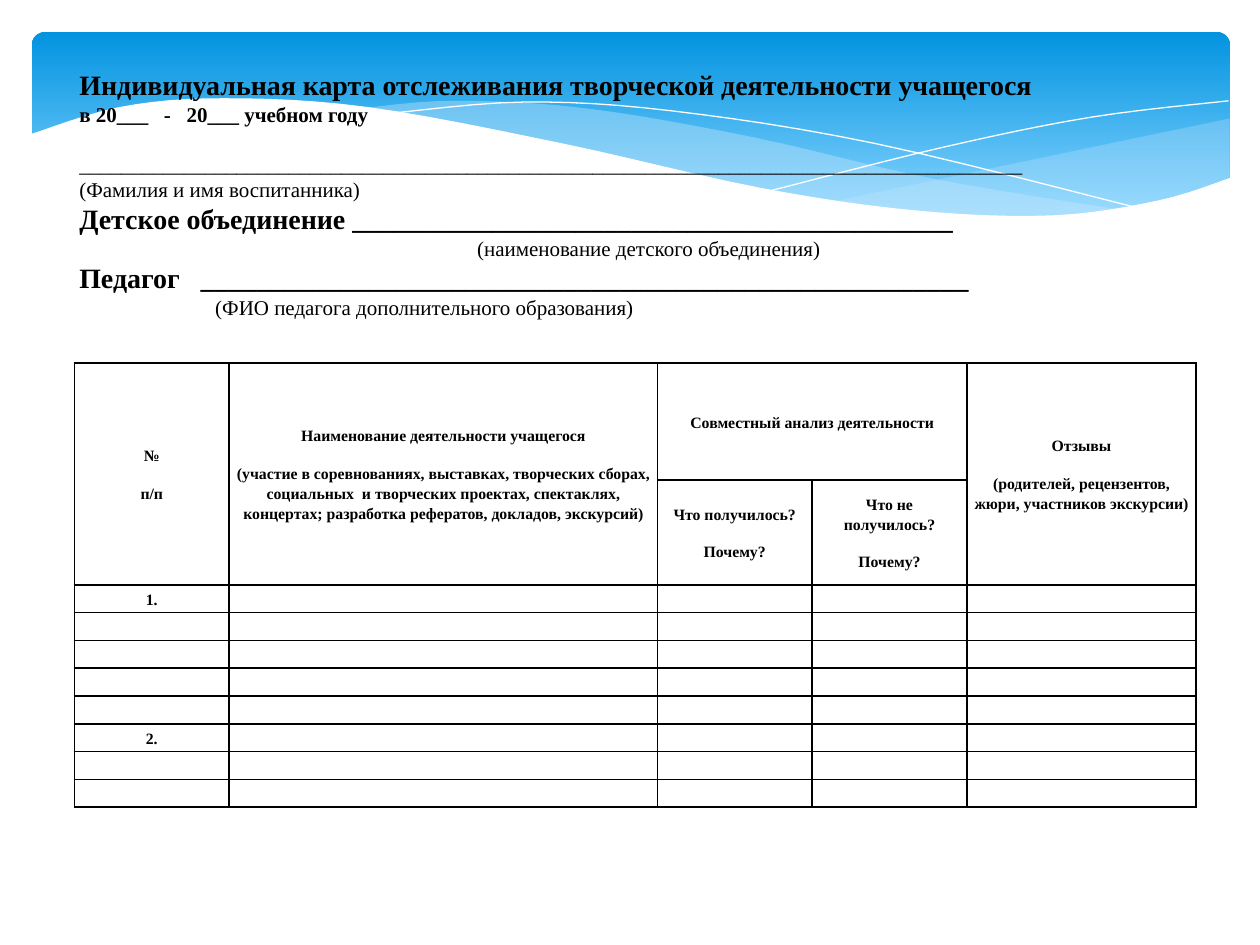
"""Build a slide with a form for tracking a pupil's creative activity."""
from dataclasses import dataclass
from typing import Optional

from lxml.etree import SubElement
from pptx import Presentation
from pptx.dml.color import RGBColor
from pptx.enum.shapes import MSO_SHAPE
from pptx.enum.text import MSO_ANCHOR, MSO_AUTO_SIZE, PP_ALIGN
from pptx.oxml.ns import qn
from pptx.util import Cm, Pt

FONT = "Times New Roman"
BLACK, WHITE, MIST = "000000", "FFFFFF", "C6E7FC"
UNIT = Cm(0.0254)
STEPS = 6


@dataclass(frozen=True)
class Wave:
    edges: tuple
    fill: Optional[str] = None
    alpha: int = 100


@dataclass(frozen=True)
class FormLine:
    text: str
    size: int = 12
    bold: bool = False
    indent: float = 0
    before: float = 0


@dataclass(frozen=True)
class Entry:
    row: int
    col: int
    lines: tuple
    rows: int = 1
    cols: int = 1


WAVES = (
    Wave((((976, 94), (861, 118), (661, 160)),
          ((661, 160), (745, 169), (835, 172), (913, 162), (976, 141))), MIST, 29),
    Wave((((893, 167), (741, 142), (598, 109), (465, 86), (361, 80), (286, 86)),
          ((286, 86), (449, 116), (601, 150), (722, 168), (818, 173), (893, 167))), MIST, 40),
    Wave((((309, 90), (416, 81), (533, 88), (695, 114), (907, 166)),)),
    Wave((((613, 151), (748, 117), (866, 93), (975, 80)),)),
    Wave((((23, 107), (95, 85), (177, 78), (292, 85), (447, 114), (603, 149),
           (726, 167), (835, 171), (920, 159), (977, 141)),
          ((977, 224),), ((23, 224),)), WHITE),
)

HEADING = FormLine(
    "Индивидуальная карта отслеживания творческой деятельности учащегося", 16, True)
FORM = (
    FormLine("в 20___   -   20___ учебном году", bold=True),
    FormLine("_" * 90, before=14),
    FormLine("(Фамилия и имя воспитанника)"),
    FormLine("Детское объединение " + "_" * 43, 16, True),
    FormLine("(наименование детского объединения)", indent=8.02),
    FormLine("Педагог   " + "_" * 55, 16, True),
    FormLine("(ФИО педагога дополнительного образования)", indent=2.74),
)

COLUMNS = (3.12, 8.63, 3.12, 3.12, 4.62)
ROWS = (2.36, 2.11) + (0.56,) * 8
ENTRIES = (
    Entry(0, 0, ("№", "п/п"), rows=2),
    Entry(0, 1, ("Наименование деятельности учащегося",
                 "(участие в соревнованиях, выставках, творческих сборах, социальных  "
                 "и творческих проектах, спектаклях, концертах; разработка рефератов, "
                 "докладов, экскурсий)"), rows=2),
    Entry(0, 2, ("Совместный анализ деятельности",), cols=2),
    Entry(0, 4, ("Отзывы", "(родителей, рецензентов, жюри, участников экскурсии)"), rows=2),
    Entry(1, 2, ("Что получилось?", "Почему?")),
    Entry(1, 3, ("Что не получилось?", "Почему?")),
    Entry(2, 0, ("1.",)),
    Entry(7, 0, ("2.",)),
)


def color(value: str) -> RGBColor:
    return RGBColor.from_string(value)


def add_run(p, text: str, size: int, bold: bool) -> None:
    r = p.add_run()
    r.text = text
    r.font.name, r.font.size, r.font.bold = FONT, Pt(size), bold
    r.font.color.rgb = color(BLACK)


def add_banner(s) -> None:
    sp = s.shapes.add_shape(MSO_SHAPE.ROUNDED_RECTANGLE, Cm(0.64), Cm(0.64), Cm(24.16), Cm(3.96))
    sp.adjustments[0] = 0.07
    sp.shadow.inherit = False
    sp.line.fill.background()
    sp.fill.gradient()
    sp.fill.gradient_angle = 270
    for stop, value, position in zip(sp.fill.gradient_stops, ("0293E0", "83D3FE"), (0, 0.9)):
        stop.color.rgb, stop.position = color(value), position


def spline(a: float, b: float, c: float, d: float, t: float) -> float:
    return b + t / 2 * (c - a + t * (2 * a - 5 * b + 4 * c - d + t * (3 * (b - c) + d - a)))


def smooth_edge(edge: tuple) -> list:
    padded = edge[:1] + edge + edge[-1:]
    curve = [edge[0]]
    for quad in zip(padded, padded[1:], padded[2:], padded[3:]):
        for step in range(1, STEPS + 1):
            curve.append(tuple(spline(*axis, step / STEPS) * UNIT for axis in zip(*quad)))
    curve[0] = tuple(value * UNIT for value in edge[0])
    return curve


def add_wave(s, wave: Wave) -> None:
    points = [point for edge in wave.edges for point in smooth_edge(edge)]
    builder = s.shapes.build_freeform(*points[0])
    builder.add_line_segments(points[1:], close=wave.fill is not None)
    sp = builder.convert_to_shape()
    sp.shadow.inherit = False
    if wave.fill is None:
        sp.fill.background()
        sp.line.color.rgb, sp.line.width = color(WHITE), Pt(0)
        return
    sp.line.fill.background()
    sp.fill.solid()
    sp.fill.fore_color.rgb = color(wave.fill)
    if wave.alpha < 100:
        srgb = sp._element.spPr.find(qn("a:solidFill")).find(qn("a:srgbClr"))
        SubElement(srgb, qn("a:alpha"), val=str(wave.alpha * 1000))


def write_form(sp, lines: tuple) -> None:
    tf = sp.text_frame
    tf.word_wrap, tf.auto_size, tf.vertical_anchor = True, MSO_AUTO_SIZE.NONE, MSO_ANCHOR.TOP
    tf.margin_left = tf.margin_right = tf.margin_top = tf.margin_bottom = 0
    for i, line in enumerate(lines):
        p = tf.add_paragraph() if i else tf.paragraphs[0]
        p.alignment, p.space_before = PP_ALIGN.LEFT, Pt(line.before)
        p._p.get_or_add_pPr().set("marL", str(Cm(line.indent)))
        add_run(p, line.text, line.size, line.bold)


def format_cell(cell) -> None:
    cell.margin_left = cell.margin_right = Cm(0.15)
    cell.margin_top = cell.margin_bottom = 0
    cell.vertical_anchor = MSO_ANCHOR.MIDDLE
    for side in ("lnL", "lnR", "lnT", "lnB"):
        ln = SubElement(cell._tc.get_or_add_tcPr(), qn(f"a:{side}"), w=str(Pt(1)))
        SubElement(SubElement(ln, qn("a:solidFill")), qn("a:srgbClr"), val=BLACK)
    cell.fill.background()


def add_activity_table(s) -> None:
    frame = s.shapes.add_table(len(ROWS), len(COLUMNS), Cm(1.5), Cm(7.32),
                               Cm(sum(COLUMNS)), Cm(sum(ROWS)))
    table = frame.table
    table.first_row = table.horz_banding = False
    for column, width in zip(table.columns, COLUMNS):
        column.width = Cm(width)
    for row, height in zip(table.rows, ROWS):
        row.height = Cm(height)
    for cell in table.iter_cells():
        format_cell(cell)
    for entry in ENTRIES:
        cell = table.cell(entry.row, entry.col)
        if entry.rows * entry.cols > 1:
            cell.merge(table.cell(entry.row + entry.rows - 1, entry.col + entry.cols - 1))
        for i, text in enumerate(entry.lines):
            p = cell.text_frame.add_paragraph() if i else cell.text_frame.paragraphs[0]
            p.alignment, p.line_spacing, p.space_after = PP_ALIGN.CENTER, 1.15, Pt(10)
            add_run(p, text, 9, True)
    for cell in table.iter_cells():
        if not cell.text_frame.text:
            SubElement(cell.text_frame.paragraphs[0]._p, qn("a:endParaRPr"), sz="900")


def main() -> None:
    prs = Presentation()
    prs.slide_width, prs.slide_height = Cm(25.4), Cm(19.05)
    s = prs.slides.add_slide(prs.slide_layouts[5])
    add_banner(s)
    for wave in WAVES:
        add_wave(s, wave)
    add_activity_table(s)
    title = s.shapes.title
    title.left, title.top, title.width, title.height = Cm(1.6), Cm(1.37), Cm(22.6), Cm(0.68)
    s.shapes._spTree.append(title._element)
    write_form(title, (HEADING,))
    write_form(s.shapes.add_textbox(Cm(1.6), Cm(2.05), Cm(22.6), Cm(4.6)), FORM)
    prs.save("out.pptx")


if __name__ == "__main__":
    main()
